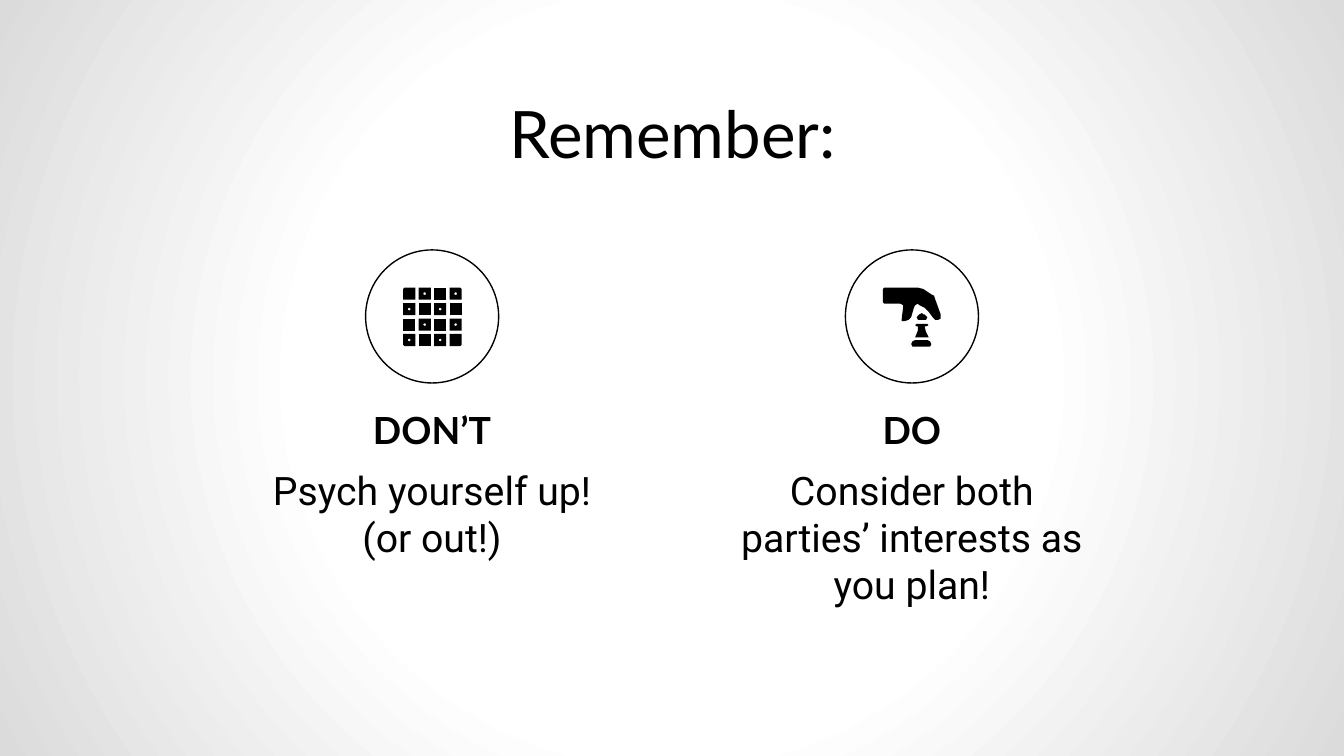
"""Build the "Remember" slide with its don't and do columns."""
import math

from lxml import etree
from pptx import Presentation, oxml, util as u
from pptx.dml.color import RGBColor
from pptx.enum import shapes, text
from pptx.oxml import ns

BLACK = "000000"


def write(holder, words, box, size, font, bold=False, anchor=text.MSO_ANCHOR.TOP):
    holder.left, holder.top, holder.width, holder.height = [u.Inches(n) for n in box]
    frame = holder.text_frame
    frame.text = words
    frame.word_wrap = True
    frame.auto_size = text.MSO_AUTO_SIZE.NONE
    frame.vertical_anchor = anchor
    frame.margin_left = frame.margin_right = u.Inches(0.1)
    frame.margin_top = frame.margin_bottom = u.Inches(0.1)
    line = frame.paragraphs[0]
    props = line._p.get_or_add_pPr()
    props.set("marL", "0")
    props.set("indent", "0")
    etree.SubElement(props, ns.qn("a:buNone"))
    line.alignment = text.PP_ALIGN.CENTER
    line.space_before = u.Pt(0)
    run = line.runs[0].font
    run.size, run.name, run.bold = u.Pt(size), font, bold
    run.color.rgb = RGBColor.from_string(BLACK)


def draw(group, outlines):
    outlines = [[(u.Inches(x), u.Inches(y)) for x, y in points] for points in outlines]
    builder = group.shapes.build_freeform(*outlines[0][0])
    builder.add_line_segments(outlines[0][1:], close=True)
    for hole in outlines[1:]:
        builder.move_to(*hole[0])
        builder.add_line_segments(hole[1:], close=True)
    part = builder.convert_to_shape()
    part.shadow.inherit = False
    part.fill.solid()
    part.fill.fore_color.rgb = RGBColor.from_string(BLACK)
    part.line.fill.background()


prs = Presentation()
prs.slide_width = u.Inches(10)
prs.slide_height = u.Inches(10 * 9 / 16)
slide = prs.slides.add_slide(prs.slide_layouts[4])
stops = "".join(f'<a:gs pos="{pos}"><a:srgbClr val="{tint}"/></a:gs>'
                for pos, tint in [(0, "FFFFFF"), (48000, "FFFFFF"), (100000, "DBDBDB")])
slide.element.cSld.insert(0, oxml.parse_xml(
    f'<p:bg {ns.nsdecls("p", "a")}><p:bgPr><a:gradFill><a:gsLst>{stops}</a:gsLst>'
    '<a:path path="circle"><a:fillToRect l="50000" t="50000" r="50000" b="50000"/></a:path>'
    '</a:gradFill><a:effectLst/></p:bgPr></p:bg>'))

write(slide.shapes.title, "Remember:", (0.79, 0.59, 8.43, 0.63), 35, "Lato")

columns = [
    (1.8, 1, "DON’T", "Psych yourself up! (or out!)"),
    (5.37, 3, "DO", "Consider both parties’ interests as you plan!"),
]
for left, index, heading, advice in columns:
    write(slide.placeholders[index], heading, (left, 3.02, 2.83, 0.44), 20, "Lato",
          bold=True, anchor=text.MSO_ANCHOR.BOTTOM)
    write(slide.placeholders[index + 1], advice, (left, 3.37, 2.83, 1.11), 21, "Roboto")
    ring = slide.shapes.add_shape(shapes.MSO_SHAPE.OVAL, u.Inches(left + 0.92), u.Inches(1.86),
                                  u.Inches(0.99), u.Inches(0.99))
    ring.shadow.inherit = False
    ring.fill.background()
    ring.line.color.rgb = RGBColor.from_string(BLACK)
    ring.line.width = u.Pt(0.75)

board = slide.shapes.add_group_shape()
pitch, side, cut, dot = 0.46 / 4, 0.09, 0.01, 0.01
for row in range(4):
    for col in range(4):
        x, y = 3 + col * pitch, 2.14 + row * pitch
        square = []
        for right, low in [(0, 0), (1, 0), (1, 1), (0, 1)]:
            corner_x, corner_y = x + right * side, y + low * side
            if (col, row) == (right * 3, low * 3):
                beside = (corner_x + cut * (1 - 2 * right), corner_y)
                along = (corner_x, corner_y + cut * (1 - 2 * low))
                square += [along, beside] if right == low else [beside, along]
            else:
                square.append((corner_x, corner_y))
        outlines = [square]
        if (row + col) % 2:
            outlines.append([(x + side / 2 + dot * math.cos(step * math.pi / 6),
                              y + side / 2 - dot * math.sin(step * math.pi / 6))
                             for step in range(12)])
        draw(board, outlines)

chess_move = slide.shapes.add_group_shape()
stem = [(6.82, 2.41), (6.81, 2.42), (6.82, 2.43), (6.83, 2.43), (6.83, 2.46), (6.81, 2.51),
        (6.91, 2.51), (6.89, 2.47), (6.88, 2.43), (6.89, 2.43), (6.91, 2.42), (6.9, 2.41)]
crown = [(6.86, 2.33), (6.84, 2.34), (6.82, 2.36), (6.83, 2.38), (6.89, 2.38),
         (6.9, 2.36), (6.88, 2.34), (6.87, 2.34)]
base = [(6.81, 2.53), (6.79, 2.54), (6.78, 2.56), (6.79, 2.58), (6.92, 2.58),
        (6.93, 2.56), (6.92, 2.54), (6.9, 2.53)]
hand = [(6.58, 2.14), (6.57, 2.15), (6.57, 2.25), (6.58, 2.26), (6.7, 2.26), (6.72, 2.27),
        (6.72, 2.29), (6.71, 2.37), (6.71, 2.39), (6.73, 2.39), (6.76, 2.38), (6.78, 2.36),
        (6.8, 2.29), (6.81, 2.27), (6.83, 2.26), (6.84, 2.27), (6.88, 2.29), (6.91, 2.32),
        (6.94, 2.36), (6.96, 2.38), (6.98, 2.38), (7, 2.37), (7, 2.34), (6.96, 2.23),
        (6.95, 2.2), (6.93, 2.19), (6.87, 2.15), (6.83, 2.14)]
for outline in [stem, crown, base, hand]:
    draw(chess_move, [outline])

prs.save("out.pptx")
